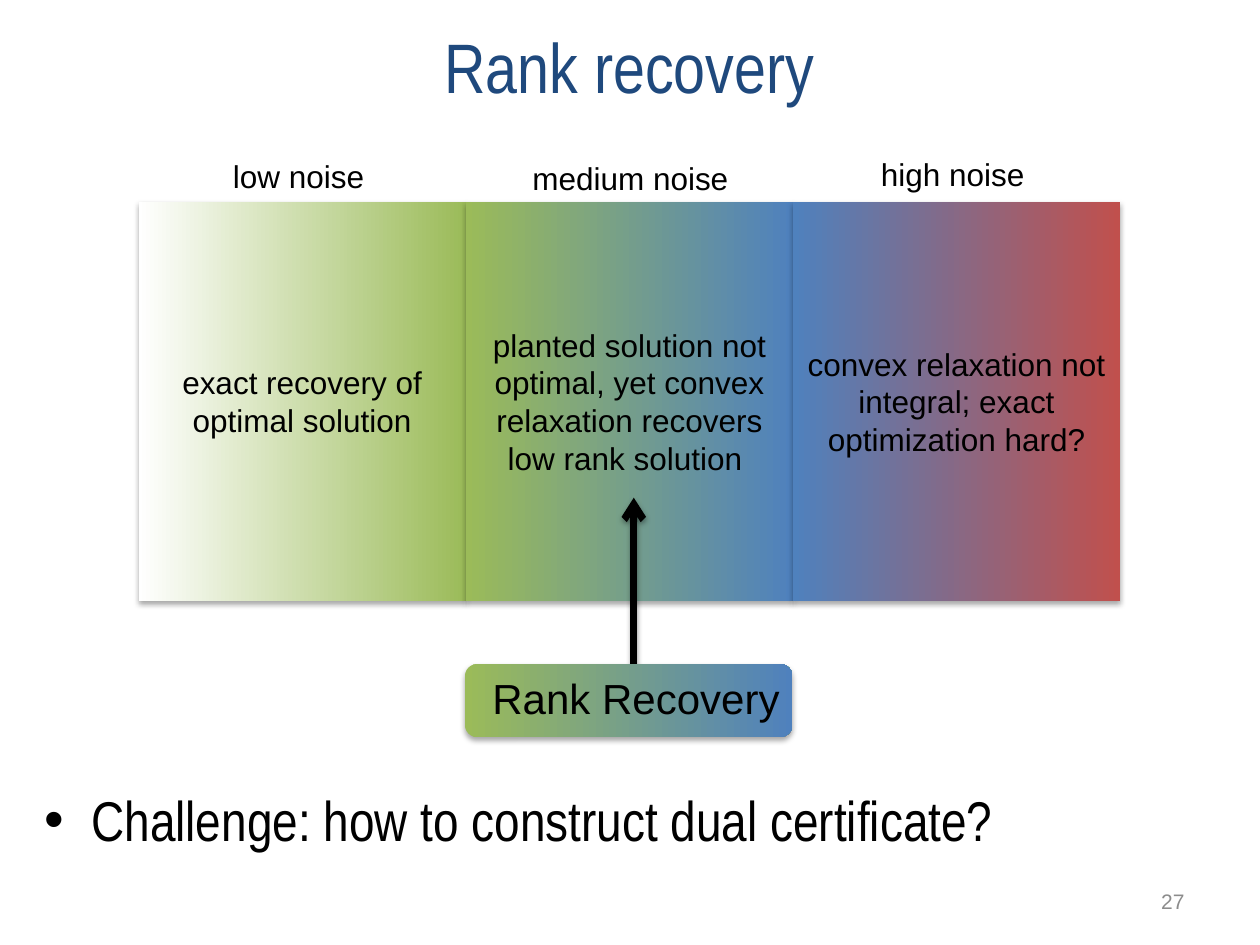
from dataclasses import dataclass

from lxml.etree import SubElement
from pptx import Presentation
from pptx.dml.color import RGBColor
from pptx.enum.shapes import MSO_CONNECTOR, MSO_SHAPE
from pptx.enum.text import MSO_ANCHOR, MSO_AUTO_SIZE, PP_ALIGN
from pptx.oxml.ns import qn
from pptx.util import Inches, Pt


@dataclass(frozen=True)
class Theme:
    heading_font: str = "Arial Narrow"
    text_font: str = "Arial"
    title_size: int = 40
    body_size: int = 32
    callout_size: int = 24
    label_size: int = 18
    number_size: int = 12
    navy: str = "1F497D"
    black: str = "000000"
    grey: str = "8C8C8C"
    white: str = "FFFFFF"
    green: str = "9BBB59"
    blue: str = "4F81BD"
    red: str = "C0504D"


THEME = Theme()

# Heading, its offset from the column's left and the diagram's top, its width,
# the text of the regime and the two ends of its colour range.
REGIMES = [
    ("low noise", 0.65, 0.02, 1.25, "exact recovery of optimal solution",
     THEME.white, THEME.green),
    ("medium noise", 0.43, 0.03, 1.77,
     "planted solution not optimal, yet convex relaxation recovers low rank solution ",
     THEME.green, THEME.blue),
    ("high noise", 0.6, 0, 1.35,
     "convex relaxation not integral; exact optimization hard?",
     THEME.blue, THEME.red),
]


def write(shape, text, size=THEME.label_size, font=THEME.text_font,
          color=THEME.black, align=None, anchor=None, wrap=True):
    frame = shape.text_frame
    frame.word_wrap = wrap
    if not wrap:
        frame.auto_size = MSO_AUTO_SIZE.SHAPE_TO_FIT_TEXT
    if anchor is not None:
        frame.vertical_anchor = anchor
    paragraph = frame.paragraphs[0]
    if align is not None:
        paragraph.alignment = align
    run = paragraph.add_run()
    run.text = text
    run.font.size = Pt(size)
    run.font.name = font
    run.font.color.rgb = RGBColor.from_string(color)


def place(shape, box):
    shape.left, shape.top, shape.width, shape.height = map(Inches, box)


def add_text(shapes, box, text, **style):
    write(shapes.add_textbox(*map(Inches, box)), text, **style)


def add_shadow(shape, distance, opacity):
    """Cast a soft black shadow downwards; the line must be set before."""
    effects = SubElement(shape._element.spPr, qn("a:effectLst"))
    shadow = SubElement(effects, qn("a:outerShdw"), blurRad=str(Pt(3.1)),
                        dist=str(Pt(distance)), dir="5400000", rotWithShape="0")
    black = SubElement(shadow, qn("a:srgbClr"), val=THEME.black)
    SubElement(black, qn("a:alpha"), val=str(opacity * 1000))


def add_gradient_block(shapes, kind, box, start, end):
    block = shapes.add_shape(kind, *map(Inches, box))
    block.fill.gradient()
    block.fill.gradient_angle = 0
    for stop, position, color in zip(block.fill.gradient_stops, (0, 1), (start, end)):
        stop.position = position
        stop.color.rgb = RGBColor.from_string(color)
    block.line.fill.background()
    add_shadow(block, distance=1.8, opacity=35)
    return block


def add_arrow(shapes, x, tail_y, head_y):
    arrow = shapes.add_connector(MSO_CONNECTOR.STRAIGHT, Inches(x), Inches(tail_y),
                                 Inches(x), Inches(head_y))
    arrow.line.width = Pt(4)
    arrow.line.color.rgb = RGBColor.from_string(THEME.black)
    SubElement(arrow.line._get_or_add_ln(), qn("a:tailEnd"), type="arrow")
    add_shadow(arrow, distance=1.6, opacity=38)


def add_regimes(shapes, box):
    """Lay out one headed colour block per noise regime in equal columns."""
    left, top, width, height = box
    column = width / len(REGIMES)
    heading_row = 0.42
    for index, (heading, dx, dy, heading_width, text, start, end) in enumerate(REGIMES):
        x = left + index * column
        block = add_gradient_block(
            shapes, MSO_SHAPE.RECTANGLE,
            (x, top + heading_row, column, height - heading_row), start, end)
        write(block, text, align=PP_ALIGN.CENTER, anchor=MSO_ANCHOR.MIDDLE)
        add_text(shapes, (x + dx, top + dy, heading_width, 0.4), heading, wrap=False)


def add_callout(shapes, box, arrow_head_y):
    """Label box with an arrow up to the regime it names."""
    left, top, width, height = box
    add_arrow(shapes, left + 1.34, top, arrow_head_y)
    add_gradient_block(shapes, MSO_SHAPE.ROUNDED_RECTANGLE, box,
                       THEME.green, THEME.blue)
    add_text(shapes, (left + 0.12, top + 0.02, width - 0.1, 0.5), "Rank Recovery",
             size=THEME.callout_size, wrap=False)


def add_title(slide, box):
    title = slide.shapes.title
    place(title, box)
    write(title, "Rank recovery", size=THEME.title_size, font=THEME.heading_font,
          color=THEME.navy, align=PP_ALIGN.CENTER, anchor=MSO_ANCHOR.MIDDLE)


def add_challenge(slide, box):
    """Bulleted line held near the foot of the body area."""
    body = slide.placeholders[1]
    place(body, box)
    body.text_frame.margin_bottom = Inches(0.46)
    write(body, "Challenge: how to construct dual certificate?",
          size=THEME.body_size, font=THEME.heading_font, anchor=MSO_ANCHOR.BOTTOM)


def main():
    deck = Presentation()
    deck.slide_width, deck.slide_height = Inches(10), Inches(7.5)
    slide = deck.slides.add_slide(deck.slide_layouts[1])
    add_title(slide, (0.25, 0.1, 9.49, 0.84))
    add_challenge(slide, (0.25, 1.18, 9.49, 6.05))
    add_text(slide.shapes, (7.17, 6.95, 2.33, 0.4), "27", size=THEME.number_size,
             color=THEME.grey, align=PP_ALIGN.RIGHT, anchor=MSO_ANCHOR.MIDDLE)
    diagram = slide.shapes.add_group_shape().shapes
    add_regimes(diagram, (1.1, 1.18, 7.79, 3.59))
    add_callout(diagram, (3.69, 5.27, 2.6, 0.58), arrow_head_y=3.95)
    deck.save("out.pptx")


if __name__ == "__main__":
    main()
